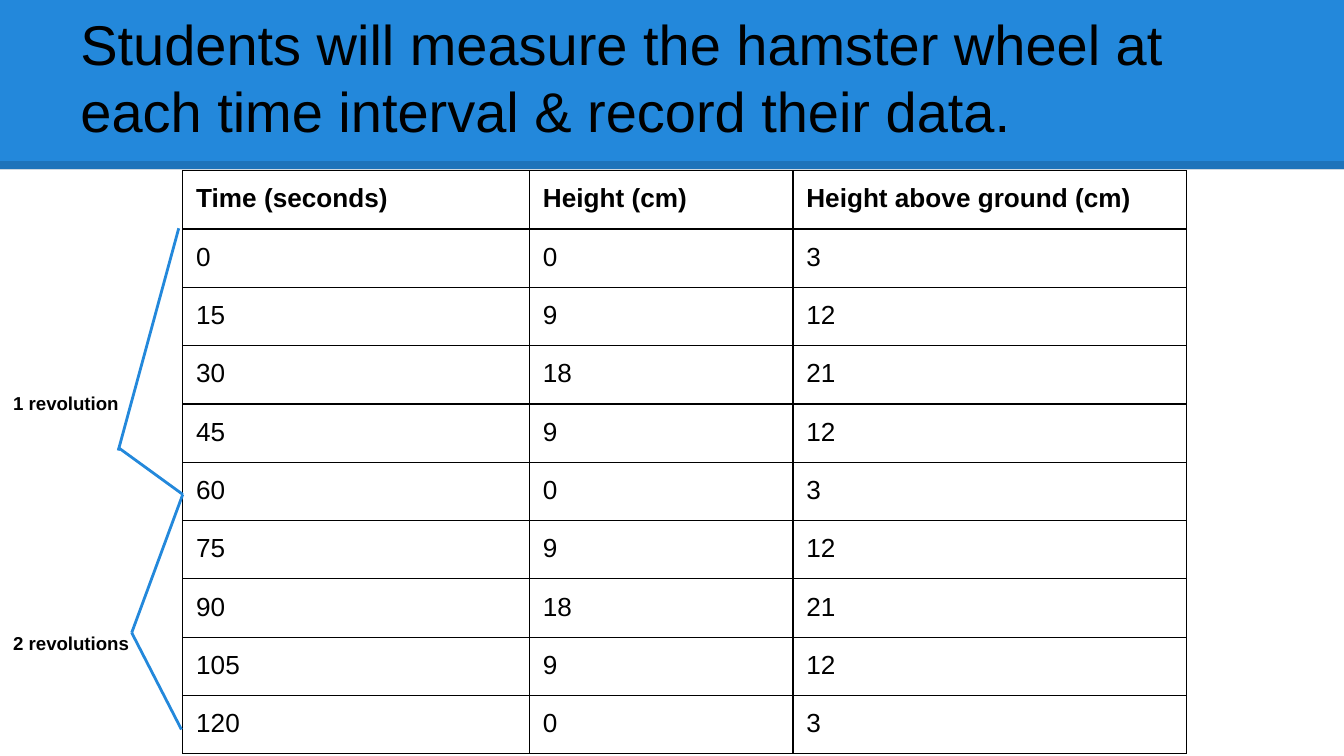
import pptx
import pptx.dml.color
import pptx.enum.shapes
import pptx.enum.text
import pptx.oxml
import pptx.oxml.ns
import pptx.util
import lxml.etree

RGBColor = pptx.dml.color.RGBColor
BLUE = RGBColor(0x23, 0x88, 0xDB)
BLACK = RGBColor(0, 0, 0)

SLIDE_WIDTH = pptx.util.Inches(10)
SLIDE_HEIGHT = pptx.util.Inches(5.625)
COLUMN = SLIDE_WIDTH / 100
ROW = SLIDE_HEIGHT / 100
INSET = pptx.util.Inches(0.1)

TITLE = "Students will measure the hamster wheel at each time interval & record their data."
HEADINGS = ["Time (seconds)", "Height (cm)", "Height above ground (cm)"]
HEIGHT_CYCLE = [0, 9, 18, 9]
AXLE_CLEARANCE = 3
INTERVAL = 15
READINGS = 9
TABLE_COLUMNS = [25.8, 19.6, 29.3]
TABLE_ROW = 7.11
REVOLUTION_LINES = [
    [(13.3, 30.2), (8.8, 59.6)],
    [(13.6, 65.4), (8.8, 59.2)],
    [(13.6, 65.4), (9.8, 83.7)],
    [(13.5, 96.5), (9.8, 83.7)],
]
REVOLUTION_LABELS = {"1 revolution": 50.3, "2 revolutions": 82.1}


def across(columns):
    return round(columns * COLUMN)


def down(rows):
    return round(rows * ROW)


def place(left, top, width, height):
    return across(left), down(top), across(width), down(height)


def apply_format(target, values):
    for name, value in values.items():
        setattr(target, name, value)


def write_text(frame, text, size, bold=False):
    para = frame.paragraphs[0]
    span = para.add_run()
    span.text = text
    apply_format(span.font, {"name": "Arial", "size": pptx.util.Pt(size), "bold": bold})
    span.font.color.rgb = BLACK
    return para


def add_text_box(page, text, bounds, size, **options):
    frame = page.shapes.add_textbox(*place(*bounds)).text_frame
    apply_format(frame, {
        "word_wrap": True,
        "vertical_anchor": options.get("anchor", pptx.enum.text.MSO_ANCHOR.TOP),
        "margin_left": INSET, "margin_right": INSET,
        "margin_top": INSET, "margin_bottom": INSET,
    })
    return write_text(frame, text, size, options.get("bold", False))


def add_line(page, start, end, color, weight):
    line = page.shapes.add_connector(
        pptx.enum.shapes.MSO_CONNECTOR.STRAIGHT,
        across(start[0]), down(start[1]), across(end[0]), down(end[1]))
    line.line.color.rgb = color
    line.line.width = pptx.util.Pt(weight)
    lxml.etree.SubElement(line._element.spPr, pptx.oxml.ns.qn("a:effectLst"))
    return line


def add_banner(page):
    banner = page.shapes.add_shape(
        pptx.enum.shapes.MSO_SHAPE.RECTANGLE, *place(0, 0, 100, 22.4))
    banner.shadow.inherit = False
    banner.fill.solid()
    banner.fill.fore_color.rgb = BLUE
    banner.line.fill.background()
    edge = add_line(page, (0, 21.87), (100, 21.87), BLACK, 4.5)
    color = edge._element.spPr.find(".//" + pptx.oxml.ns.qn("a:srgbClr"))
    lxml.etree.SubElement(color, pptx.oxml.ns.qn("a:alpha"), val="15000")


def draw_borders(cell):
    properties = cell._tc.get_or_add_tcPr()
    for position, side in enumerate(["lnL", "lnR", "lnT", "lnB"]):
        border = pptx.oxml.parse_xml(
            f'<a:{side} {pptx.oxml.ns.nsdecls("a")} w="{pptx.util.Pt(0.75)}">'
            f'<a:solidFill><a:srgbClr val="{BLACK}"/></a:solidFill></a:{side}>')
        properties.insert(position, border)


def measurement_rows():
    rows = [HEADINGS]
    for reading in range(READINGS):
        height = HEIGHT_CYCLE[reading % len(HEIGHT_CYCLE)]
        rows.append([reading * INTERVAL, height, height + AXLE_CLEARANCE])
    return rows


def add_measurements(page):
    rows = measurement_rows()
    bounds = place(13.6, 22.58, sum(TABLE_COLUMNS), TABLE_ROW * len(rows))
    table = page.shapes.add_table(len(rows), len(HEADINGS), *bounds).table
    apply_format(table, {"first_row": False, "horz_banding": False})
    for column, width in zip(table.columns, TABLE_COLUMNS):
        column.width = across(width)
    for row_index, values in enumerate(rows):
        table.rows[row_index].height = down(TABLE_ROW)
        for column_index, value in enumerate(values):
            cell = table.cell(row_index, column_index)
            apply_format(cell, {
                "margin_left": INSET, "margin_right": INSET,
                "margin_top": INSET, "margin_bottom": INSET,
            })
            cell.fill.background()
            draw_borders(cell)
            write_text(cell.text_frame, str(value), 14, bold=row_index == 0)


def main():
    deck = pptx.Presentation()
    apply_format(deck, {"slide_width": SLIDE_WIDTH, "slide_height": SLIDE_HEIGHT})
    page = deck.slides.add_slide(deck.slide_layouts[6])
    add_banner(page)
    title = add_text_box(page, TITLE, (5, 4.1, 90, 16.7), 30,
                         anchor=pptx.enum.text.MSO_ANCHOR.BOTTOM)
    title.space_before = pptx.util.Pt(6)
    add_measurements(page)
    for start, end in REVOLUTION_LINES:
        add_line(page, start, end, BLUE, 1.5)
    for label, top in REVOLUTION_LABELS.items():
        add_text_box(page, label, (0, top, 11, 6.4), 10, bold=True)
    deck.save("out.pptx")


if __name__ == "__main__":
    main()
